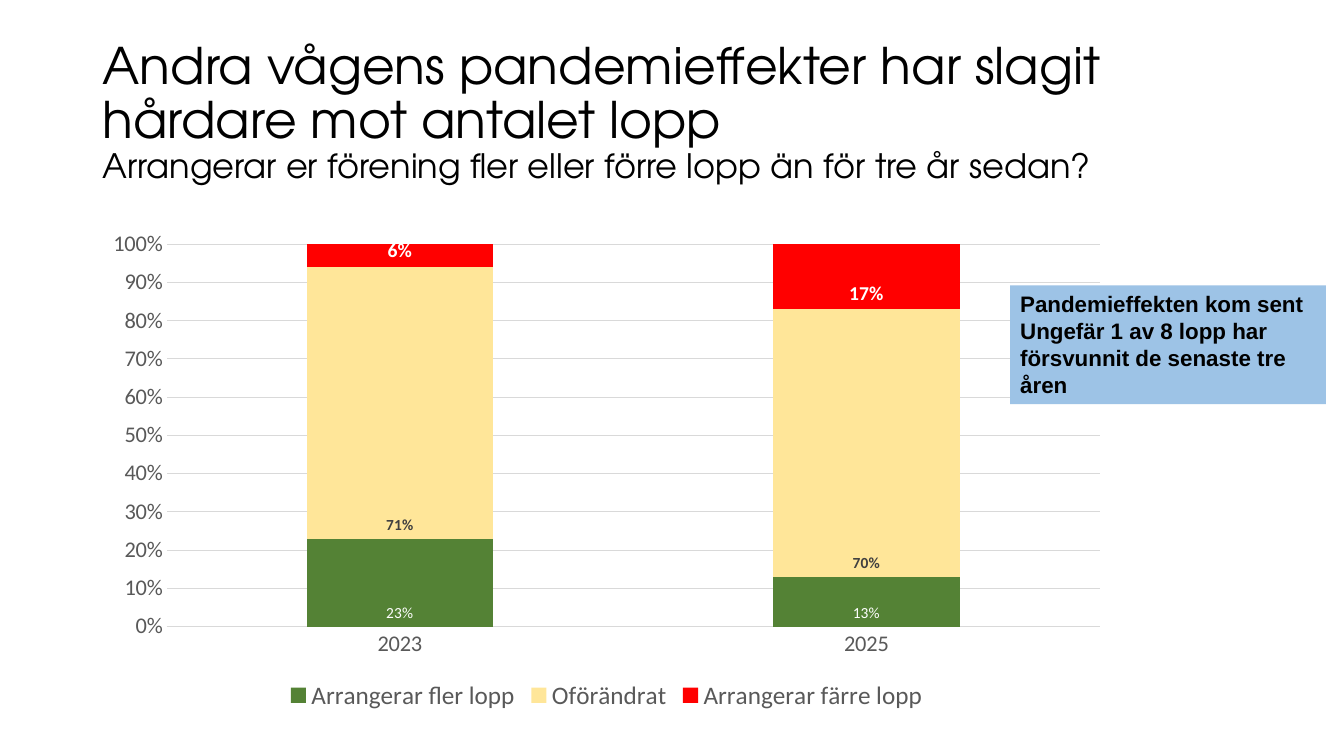
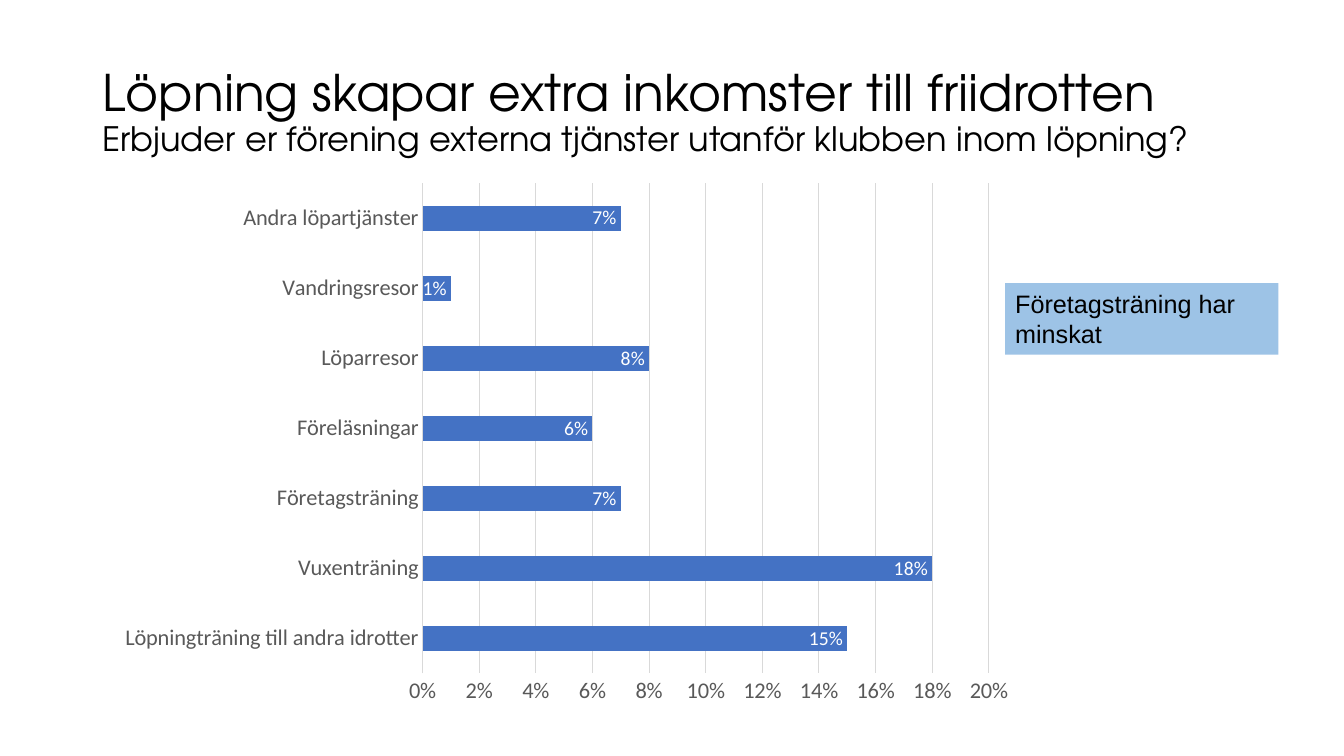
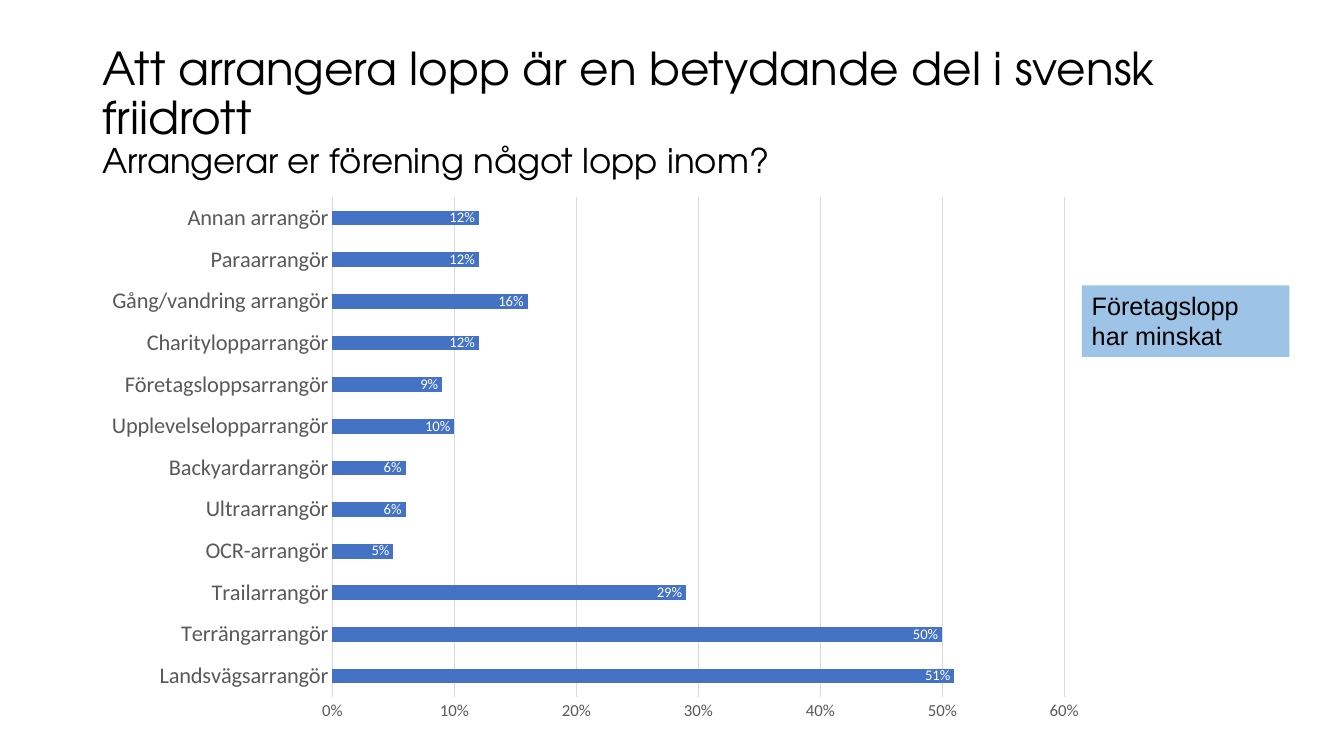
from dataclasses import dataclass
from typing import NamedTuple

from pptx import Presentation
from pptx.chart.axis import CategoryAxis, ValueAxis
from pptx.chart.chart import Chart
from pptx.chart.data import CategoryChartData
from pptx.chart.series import BarSeries
from pptx.dml.color import RGBColor
from pptx.dml.line import LineFormat
from pptx.enum.chart import (
    XL_CHART_TYPE,
    XL_LABEL_POSITION,
    XL_LEGEND_POSITION,
    XL_TICK_MARK,
)
from pptx.enum.shapes import MSO_SHAPE
from pptx.enum.text import MSO_ANCHOR, MSO_AUTO_SIZE, PP_ALIGN
from pptx.slide import Slide
from pptx.text.text import Font
from pptx.util import Emu, Pt

BLACK = RGBColor(0x00, 0x00, 0x00)
WHITE = RGBColor(0xFF, 0xFF, 0xFF)
DARK_GREY = RGBColor(0x40, 0x40, 0x40)
AXIS_GREY = RGBColor(0x59, 0x59, 0x59)
GRID_GREY = RGBColor(0xD9, 0xD9, 0xD9)
GREEN = RGBColor(0x54, 0x82, 0x35)
YELLOW = RGBColor(0xFF, 0xE6, 0x99)
RED = RGBColor(0xFF, 0x00, 0x00)
BLUE = RGBColor(0x44, 0x72, 0xC4)
NOTE_BLUE = RGBColor(0x9D, 0xC3, 0xE6)

TITLE_FONT = "TeX Gyre Adventor"
NOTE_FONT = "Arial"
CHART_FONT = "Calibri"
PERCENT = "0%"
EMU_PER_PX = 9144  # 100 px to the inch


class Box(NamedTuple):
    left: int
    top: int
    width: int
    height: int

    def emu(self) -> tuple[Emu, ...]:
        return tuple(Emu(side * EMU_PER_PX) for side in self)


SLIDE = Box(0, 0, 1333, 750)
TITLE = Box(92, 40, 1150, 145)


@dataclass(frozen=True)
class Heading:
    title: str
    question: str
    title_size: float = 36
    question_size: float = 24


@dataclass(frozen=True)
class Note:
    box: Box
    lines: tuple[str, ...]
    size: float = 18
    bold: bool = False


@dataclass(frozen=True)
class Answer:
    """One chart series and the look of its labels."""
    name: str
    values: tuple[float, ...]
    color: RGBColor
    label_size: float
    label_color: RGBColor = WHITE
    label_bold: bool = False


@dataclass(frozen=True)
class Survey:
    box: Box
    categories: tuple[str, ...]
    answers: tuple[Answer, ...]
    axis_max: float
    axis_step: float
    value_size: float = 16
    stacked: bool = False


@dataclass(frozen=True)
class Page:
    heading: Heading
    survey: Survey
    note: Note


def single_answer(label_size: float, *values: float) -> tuple[Answer, ...]:
    return (Answer("Series 1", values, BLUE, label_size),)


PAGES = (
    Page(
        Heading(
            "Andra vågens pandemieffekter har slagit hårdare mot antalet lopp",
            "Arrangerar er förening fler eller förre lopp än för tre år sedan?",
        ),
        Survey(
            Box(92, 219, 1019, 491),
            ("2023", "2025"),
            (
                Answer("Arrangerar fler lopp", (0.23, 0.13), GREEN, 11),
                Answer("Oförändrat", (0.71, 0.70), YELLOW, 11, DARK_GREY, True),
                Answer("Arrangerar färre lopp", (0.06, 0.17), RED, 14, WHITE, True),
            ),
            axis_max=1,
            axis_step=0.1,
            stacked=True,
        ),
        Note(
            Box(1002, 283, 313, 118),
            (
                "Pandemieffekten kom sent",
                "Ungefär 1 av 8 lopp har försvunnit de senaste tre åren",
            ),
            size=16,
            bold=True,
        ),
    ),
    Page(
        Heading(
            "Löpning skapar extra inkomster till friidrotten",
            "Erbjuder er förening externa tjänster utanför klubben inom löpning?",
        ),
        Survey(
            Box(106, 171, 912, 539),
            (
                "Löpningträning till andra idrotter",
                "Vuxenträning",
                "Företagsträning",
                "Föreläsningar",
                "Löparresor",
                "Vandringsresor",
                "Andra löpartjänster",
            ),
            single_answer(14, 0.15, 0.18, 0.07, 0.06, 0.08, 0.01, 0.07),
            axis_max=0.2,
            axis_step=0.02,
        ),
        Note(Box(997, 281, 271, 71), ("Företagsträning har minskat",)),
    ),
    Page(
        Heading(
            "Att arrangera lopp är en betydande del i svensk friidrott",
            "Arrangerar er förening något lopp inom?",
            title_size=32.4,
            question_size=24.3,
        ),
        Survey(
            Box(91, 185, 999, 541),
            (
                "Landsvägsarrangör",
                "Terrängarrangör",
                "Trailarrangör",
                "OCR-arrangör",
                "Ultraarrangör",
                "Backyardarrangör",
                "Upplevelselopparrangör",
                "Företagsloppsarrangör",
                "Charitylopparrangör",
                "Gång/vandring arrangör",
                "Paraarrangör",
                "Annan arrangör",
            ),
            single_answer(
                10.5,
                0.51, 0.50, 0.29, 0.05, 0.06, 0.06,
                0.10, 0.09, 0.12, 0.16, 0.12, 0.12,
            ),
            axis_max=0.6,
            axis_step=0.1,
            value_size=12,
        ),
        Note(Box(1073, 283, 206, 71), ("Företagslopp har minskat",)),
    ),
)


def set_font(
    font: Font, name: str, size: float, color: RGBColor, bold: bool = False
) -> None:
    font.name = name
    font.size = Pt(size)
    font.bold = bold
    font.color.rgb = color


def set_grey_line(line: LineFormat) -> None:
    line.color.rgb = GRID_GREY
    line.width = Pt(0.75)


def add_heading(slide: Slide, heading: Heading) -> None:
    frame = slide.shapes.add_textbox(*TITLE.emu()).text_frame
    frame.word_wrap = True
    frame.vertical_anchor = MSO_ANCHOR.MIDDLE
    paragraph = frame.paragraphs[0]
    paragraph.line_spacing = 0.9
    title = paragraph.add_run()
    title.text = heading.title
    paragraph.add_line_break()
    question = paragraph.add_run()
    question.text = heading.question
    set_font(title.font, TITLE_FONT, heading.title_size, BLACK)
    set_font(question.font, TITLE_FONT, heading.question_size, BLACK)


def add_note(slide: Slide, note: Note) -> None:
    panel = slide.shapes.add_shape(MSO_SHAPE.RECTANGLE, *note.box.emu())
    panel.shadow.inherit = False
    panel.fill.solid()
    panel.fill.fore_color.rgb = NOTE_BLUE
    panel.line.fill.background()
    frame = panel.text_frame
    frame.word_wrap = True
    frame.auto_size = MSO_AUTO_SIZE.SHAPE_TO_FIT_TEXT
    frame.vertical_anchor = MSO_ANCHOR.TOP
    frame.text = "\n".join(note.lines)
    for paragraph in frame.paragraphs:
        paragraph.alignment = PP_ALIGN.LEFT
        set_font(paragraph.font, NOTE_FONT, note.size, BLACK, note.bold)


def style_axis(axis: CategoryAxis | ValueAxis, size: float) -> None:
    axis.major_tick_mark = XL_TICK_MARK.NONE
    axis.minor_tick_mark = XL_TICK_MARK.NONE
    set_font(axis.tick_labels.font, CHART_FONT, size, AXIS_GREY)


def style_axes(chart: Chart, survey: Survey) -> None:
    style_axis(chart.category_axis, 16)
    set_grey_line(chart.category_axis.format.line)

    values = chart.value_axis
    style_axis(values, survey.value_size)
    values.format.line.fill.background()
    values.has_major_gridlines = True
    set_grey_line(values.major_gridlines.format.line)
    values.minimum_scale = 0
    values.maximum_scale = survey.axis_max
    values.major_unit = survey.axis_step
    values.tick_labels.number_format = PERCENT
    values.tick_labels.number_format_is_linked = False


def style_series(
    series: BarSeries, answer: Answer, position: XL_LABEL_POSITION
) -> None:
    series.format.fill.solid()
    series.format.fill.fore_color.rgb = answer.color
    labels = series.data_labels
    labels.show_value = True
    labels.position = position
    labels.number_format = PERCENT
    labels.number_format_is_linked = False
    set_font(
        labels.font, CHART_FONT, answer.label_size,
        answer.label_color, answer.label_bold,
    )


def add_survey(slide: Slide, survey: Survey) -> None:
    data = CategoryChartData(number_format=PERCENT)
    data.categories = survey.categories
    for answer in survey.answers:
        data.add_series(answer.name, answer.values)

    if survey.stacked:
        kind = XL_CHART_TYPE.COLUMN_STACKED_100
        position = XL_LABEL_POSITION.INSIDE_BASE
    else:
        kind = XL_CHART_TYPE.BAR_CLUSTERED
        position = XL_LABEL_POSITION.INSIDE_END
    chart = slide.shapes.add_chart(kind, *survey.box.emu(), data).chart
    set_font(chart.font, CHART_FONT, 10, BLACK)
    chart.has_title = False
    chart.has_legend = survey.stacked
    if survey.stacked:
        chart.legend.position = XL_LEGEND_POSITION.BOTTOM
        chart.legend.include_in_layout = False
        set_font(chart.legend.font, CHART_FONT, 18, AXIS_GREY)

    plot = chart.plots[0]
    plot.vary_by_categories = False
    plot.gap_width = 150 if survey.stacked else 182
    plot.overlap = 100 if survey.stacked else 0
    style_axes(chart, survey)
    for series, answer in zip(plot.series, survey.answers):
        style_series(series, answer, position)


def main() -> None:
    deck = Presentation()
    _, _, deck.slide_width, deck.slide_height = SLIDE.emu()
    blank = deck.slide_layouts[6]
    for page in PAGES:
        slide = deck.slides.add_slide(blank)
        add_heading(slide, page.heading)
        add_survey(slide, page.survey)
        add_note(slide, page.note)
    deck.save("out.pptx")


if __name__ == "__main__":
    main()
